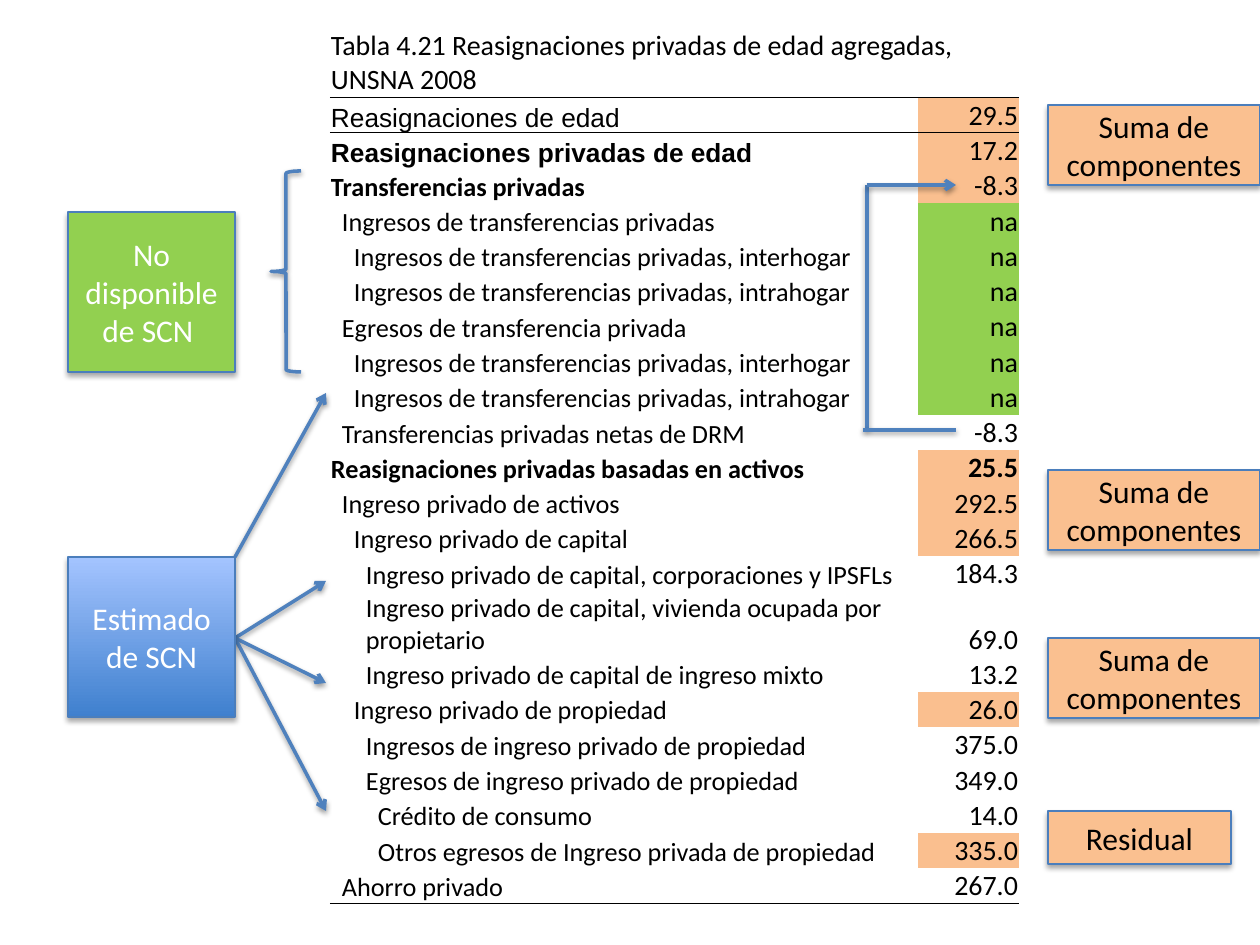
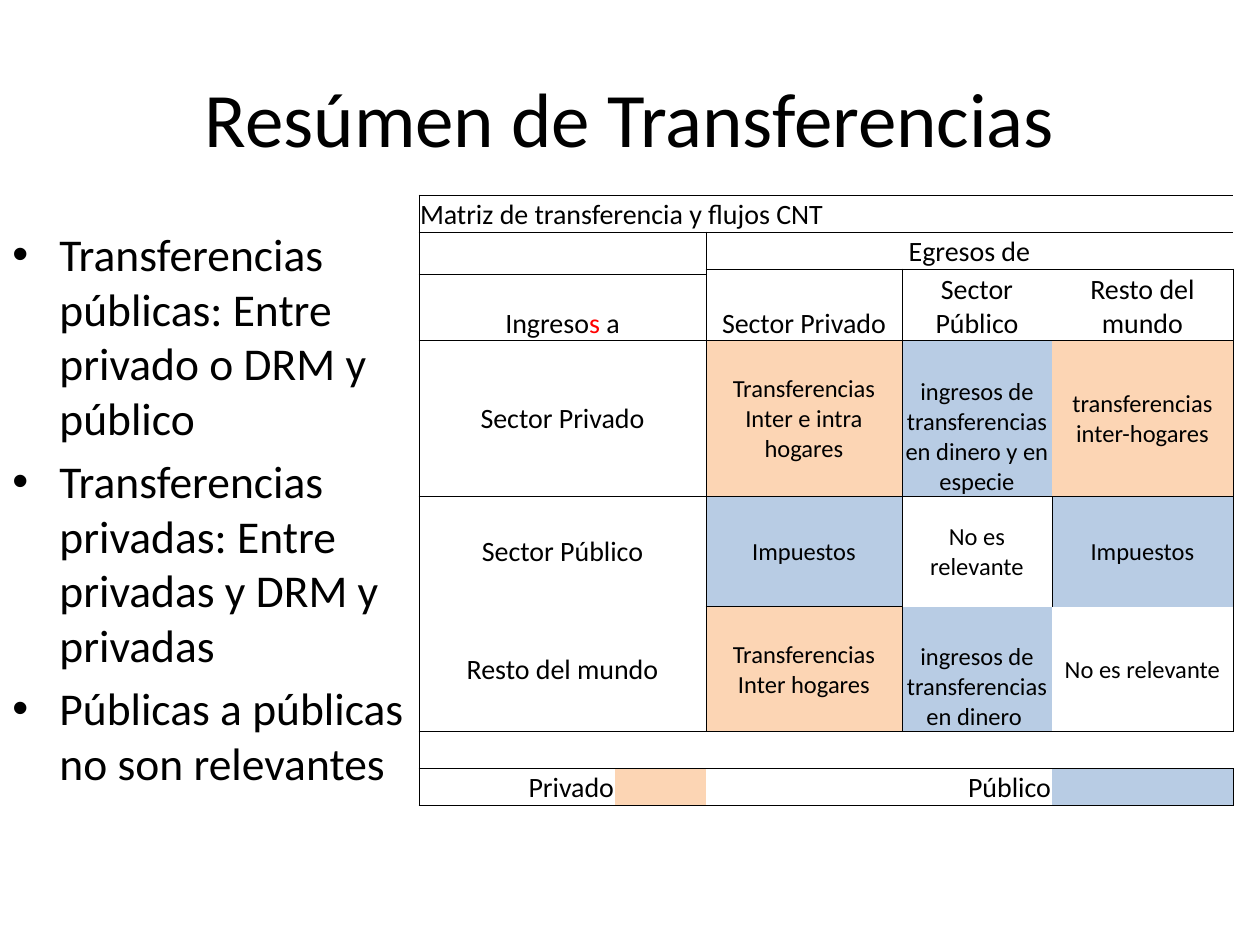
from typing import Any, NamedTuple, Optional

import lxml.etree
import pptx
import pptx.dml.color
import pptx.enum.shapes
import pptx.enum.text
import pptx.oxml.ns
import pptx.util

Color = pptx.dml.color.RGBColor
Align = pptx.enum.text.PP_ALIGN
Anchor = pptx.enum.text.MSO_ANCHOR
Shape = pptx.enum.shapes.MSO_SHAPE
qn = pptx.oxml.ns.qn

BLACK = Color(0x00, 0x00, 0x00)
WHITE = Color(0xFF, 0xFF, 0xFF)
RED = Color(0xFF, 0x00, 0x00)
GREEN = Color(0x92, 0xD0, 0x50)
ORANGE = Color(0xFA, 0xBF, 0x8F)
AMBER = Color(0xFA, 0xC0, 0x90)
PEACH = Color(0xFC, 0xD5, 0xB4)
SKY = Color(0xB8, 0xCC, 0xE4)
BLUE = Color(0x4F, 0x81, 0xBD)
EDGE = Color(0x4B, 0x7E, 0xBC)
DEEP = Color(0x3F, 0x80, 0xCE)
PALE = Color(0xA4, 0xC4, 0xFF)

FONT = "Calibri"
PLAIN_STYLE = "{2D5ABB26-0587-4C30-8999-92F81FD0307C}"
PX_PER_INCH = 126
ROW = 28


class Cell(NamedTuple):
    row: int
    col: int
    text: str = ""
    sides: str = ""
    fill: Optional[Color] = None
    rows: int = 1
    cols: int = 1
    size: int = 16
    align: Any = Align.CENTER
    anchor: Any = Anchor.MIDDLE
    left: int = 1
    bold: bool = False
    font: str = FONT


class Item(NamedTuple):
    level: int
    label: str
    value: str
    fill: Optional[Color] = None
    bold: bool = False
    font: str = FONT
    strong: bool = False


class Box(NamedTuple):
    x: int
    y: int
    w: int
    h: int
    text: str
    fill: Optional[Color]
    ink: Color


class Line(NamedTuple):
    x1: int
    y1: int
    x2: int
    y2: int
    arrow: bool = True


def px(n: int) -> int:
    return round(n * pptx.util.Inches(1) / PX_PER_INCH)


def add(node: Any, tag: str, **attrs: Any) -> Any:
    return lxml.etree.SubElement(node, qn(tag), {k: str(v) for k, v in attrs.items()})


def style(par: Any, size: int, color: Color = BLACK, align: Any = Align.LEFT,
          font: str = FONT, bold: bool = False) -> None:
    par.alignment = align
    par.font.size = pptx.util.Pt(size)
    par.font.name = font
    par.font.bold = bold
    par.font.color.rgb = color


def shade(shape: Any, alpha: int, dist: float) -> None:
    props = shape._element.spPr
    for old in props.findall(qn("a:effectLst")):
        props.remove(old)
    cast = add(add(props, "a:effectLst"), "a:outerShdw", blurRad=pptx.util.Pt(3.1),
               dist=pptx.util.Pt(dist), dir=90 * 60000, rotWithShape=0)
    add(add(cast, "a:srgbClr", val=BLACK), "a:alpha", val=alpha * 1000)


def stroke(shape: Any, color: Color, width: float) -> None:
    shape.line.color.rgb = color
    shape.line.width = pptx.util.Pt(width)


def add_line(slide: Any, line: Line) -> None:
    link = slide.shapes.add_connector(
        pptx.enum.shapes.MSO_CONNECTOR.STRAIGHT, *map(px, line[:4]))
    stroke(link, BLUE, 2)
    if line.arrow:
        add(link.line._get_or_add_ln(), "a:tailEnd", type="arrow")
    shade(link, 38, 1.6)


def add_box(slide: Any, box: Box) -> None:
    shape = slide.shapes.add_shape(Shape.RECTANGLE, *map(px, box[:4]))
    shape.shadow.inherit = False
    if box.fill is None:
        shape.fill.gradient()
        shape.fill.gradient_angle = 90
        for stop, color in zip(shape.fill.gradient_stops, (DEEP, PALE)):
            stop.color.rgb = color
    else:
        shape.fill.solid()
        shape.fill.fore_color.rgb = box.fill
    stroke(shape, EDGE, 0.75)
    shade(shape, 35, 1.8)
    frame = shape.text_frame
    frame.word_wrap = True
    frame.vertical_anchor = Anchor.MIDDLE
    frame.text = box.text
    style(frame.paragraphs[0], 18, box.ink, Align.CENTER)


def add_brace(slide: Any, x: int, y: int, w: int, h: int) -> None:
    brace = slide.shapes.add_shape(Shape.LEFT_BRACE, *map(px, (x, y, w, h)))
    brace.shadow.inherit = False
    brace.fill.background()
    stroke(brace, BLUE, 2)
    shade(brace, 38, 1.6)


def rule(cell: Any, sides: str) -> None:
    props = cell._tc.get_or_add_tcPr()
    for at, side in enumerate(s for s in "LRTB" if s in sides):
        edge = add(props, f"a:ln{side}", w=pptx.util.Pt(0.5))
        add(add(edge, "a:solidFill"), "a:srgbClr", val=BLACK)
        props.insert(at, edge)


def fill_cell(table: Any, cell: Cell) -> None:
    end_row, end_col = cell.row + cell.rows - 1, cell.col + cell.cols - 1
    head = table.cell(cell.row, cell.col)
    if cell.rows * cell.cols > 1:
        head.merge(table.cell(end_row, end_col))
    head.text = cell.text
    head.vertical_anchor = cell.anchor
    for row in range(cell.row, end_row + 1):
        for col in range(cell.col, end_col + 1):
            part = table.cell(row, col)
            part.margin_left, part.margin_right = px(cell.left), px(1)
            part.margin_top, part.margin_bottom = px(1), 0
            if cell.fill is None:
                part.fill.background()
            else:
                part.fill.solid()
                part.fill.fore_color.rgb = cell.fill
            style(part.text_frame.paragraphs[0], cell.size, BLACK,
                  cell.align, cell.font, cell.bold)
            outer = {"L": col == cell.col, "R": col == end_col,
                     "T": row == cell.row, "B": row == end_row}
            rule(part, "".join(s for s in cell.sides if outer[s]))


def add_table(slide: Any, x: int, y: int, cols: list[int], rows: list[int],
              cells: list[Cell]) -> Any:
    table = slide.shapes.add_table(
        len(rows), len(cols), *map(px, (x, y, sum(cols), sum(rows)))).table
    table.first_row = table.horz_banding = False
    table._tbl.tblPr.find(qn("a:tableStyleId")).text = PLAIN_STYLE
    for col, width in zip(table.columns, cols):
        col.width = px(width)
    for row, height in zip(table.rows, rows):
        row.height = px(height)
    for cell in cells:
        fill_cell(table, cell)
    return table


def add_text(slide: Any, x: int, y: int, w: int, h: int) -> Any:
    frame = slide.shapes.add_textbox(*map(px, (x, y, w, h))).text_frame
    frame.word_wrap = True
    return frame


INTER = "Ingresos de transferencias privadas, interhogar"
INTRA = "Ingresos de transferencias privadas, intrahogar"
ITEMS = [
    Item(0, "Reasignaciones de edad", "29.5", ORANGE, font="Arial"),
    Item(0, "Reasignaciones privadas de edad", "17.2", ORANGE, True, "Arial"),
    Item(0, "Transferencias privadas", "-8.3", ORANGE, True),
    Item(1, "Ingresos de transferencias privadas", "na", GREEN),
    Item(2, INTER, "na", GREEN),
    Item(2, INTRA, "na", GREEN),
    Item(1, "Egresos de transferencia privada", "na", GREEN),
    Item(2, INTER, "na", GREEN),
    Item(2, INTRA, "na", GREEN),
    Item(1, "Transferencias privadas netas de DRM", "-8.3"),
    Item(0, "Reasignaciones privadas basadas en activos", "25.5", ORANGE, True, strong=True),
    Item(1, "Ingreso privado de activos", "292.5", ORANGE),
    Item(2, "Ingreso privado de capital", "266.5", ORANGE),
    Item(3, "Ingreso privado de capital, corporaciones y IPSFLs", "184.3"),
    Item(3, "Ingreso privado de capital, vivienda ocupada por propietario", "69.0"),
    Item(3, "Ingreso privado de capital de ingreso mixto", "13.2"),
    Item(2, "Ingreso privado de propiedad", "26.0", ORANGE),
    Item(3, "Ingresos de ingreso privado de propiedad", "375.0"),
    Item(3, "Egresos de ingreso privado de propiedad", "349.0"),
    Item(4, "Crédito de consumo", "14.0"),
    Item(4, "Otros egresos de Ingreso privada de propiedad", "335.0", ORANGE),
    Item(1, "Ahorro privado", "267.0"),
]
LINES = [
    Line(867, 430, 867, 185, False),
    Line(867, 185, 956, 185),
    Line(863, 430, 956, 430, False),
    Line(235, 557, 326, 393),
    Line(235, 638, 326, 581),
    Line(235, 638, 326, 683),
    Line(235, 638, 326, 811),
]
BOXES = [
    Box(1048, 811, 183, 53, "Residual", AMBER, BLACK),
    *(Box(1048, y, 212, 80, "Suma de componentes", AMBER, BLACK) for y in (105, 470, 638)),
    Box(68, 212, 167, 160, "No disponible de SCN ", GREEN, WHITE),
    Box(68, 557, 167, 160, "Estimado de SCN", None, WHITE),
]
LOW = Anchor.BOTTOM
MATRIX = [
    Cell(0, 0, "Matriz de transferencia y flujos CNT", "LRTB", cols=5, align=Align.LEFT, anchor=LOW),
    Cell(1, 0, "", "LRT", rows=2, cols=2),
    Cell(1, 2, "Egresos de", "LRTB", cols=3, anchor=LOW),
    Cell(2, 2, "Sector Privado", "LTB", rows=2, anchor=LOW),
    Cell(2, 3, "Sector Público", "TB", rows=2, anchor=LOW),
    Cell(2, 4, "Resto del mundo", "TRB", rows=2, anchor=LOW),
    Cell(3, 0, "Ingresos a", "LRB", cols=2, anchor=LOW),
    Cell(4, 0, "Sector Privado", "LTR", cols=2),
    Cell(4, 2, "Transferencias Inter e intra hogares", "LT", PEACH, size=14),
    Cell(4, 3, "ingresos de transferencias en dinero y en especie", "T", SKY, size=14, anchor=LOW),
    Cell(4, 4, "transferencias inter-hogares", "TR", PEACH, size=14),
    Cell(5, 0, "Sector Público", "LR", cols=2),
    Cell(5, 2, "Impuestos", "LB", SKY, size=14),
    Cell(5, 3, "No es relevante", "R", size=14),
    Cell(5, 4, "Impuestos", "L", SKY, size=14),
    Cell(6, 0, "Resto del mundo", "LRB", cols=2),
    Cell(6, 2, "Transferencias Inter hogares", "LRTB", PEACH, size=14),
    Cell(6, 3, "ingresos de transferencias en dinero ", "LB", SKY, size=14, anchor=LOW),
    Cell(6, 4, "No es relevante", "RB", size=14),
    Cell(7, 0, "", "LRTB", cols=5),
    Cell(8, 0, "Privado", "LTB", align=Align.RIGHT),
    Cell(8, 1, "", "TB", PEACH),
    Cell(8, 2, "", "TB"),
    Cell(8, 3, "Público", "TB", align=Align.RIGHT),
    Cell(8, 4, "", "TRB", SKY),
]
POINTS = [
    "Transferencias públicas: Entre privado o DRM y público",
    "Transferencias privadas: Entre privadas y DRM y privadas",
    "Públicas a públicas no son relevantes",
]


def draw_flows(slide: Any) -> None:
    cells = [Cell(0, 0, "Tabla 4.21 Reasignaciones privadas de edad agregadas, UNSNA 2008",
                  "B", cols=2, align=Align.LEFT, anchor=LOW)]
    for row, item in enumerate(ITEMS, 1):
        sides = {1: "T", len(ITEMS): "B"}.get(row, "")
        cells.append(Cell(row, 0, item.label, sides, size=15, align=Align.LEFT, anchor=LOW,
                          left=max(1, 12 * item.level), bold=item.bold, font=item.font))
        cells.append(Cell(row, 1, item.value, sides, item.fill, align=Align.RIGHT,
                          anchor=LOW, bold=item.strong))
    add_table(slide, 330, 28, [588, 101], [ROW] * len(range(len(ITEMS) + 1)), cells)
    for line in LINES:
        add_line(slide, line)
    for box in BOXES:
        add_box(slide, box)
    add_brace(slide, 271, 171, 30, 201)


def draw_sum(slide: Any) -> None:
    title = add_text(slide, 63, 38, 1134, 157)
    title.vertical_anchor = Anchor.MIDDLE
    title.text = "Resúmen de Transferencias"
    style(title.paragraphs[0], 44, align=Align.CENTER)

    body = add_text(slide, 0, 220, 420, 624)
    body.text = "\n".join(POINTS)
    for at, par in enumerate(body.paragraphs):
        props = par._p.get_or_add_pPr()
        props.set("marL", str(px(47)))
        props.set("indent", str(px(-47)))
        if at:
            par.space_before = pptx.util.Pt(5)
        add(props, "a:buFont", typeface="Arial")
        add(props, "a:buChar", char="•")
        style(par, 26)

    table = add_table(slide, 419, 195, [196, 91, 196, 150, 181],
                      [37, 37, 6, 66, 156, 110, 125, 37, 37], MATRIX)
    par = table.cell(3, 0).text_frame.paragraphs[0]
    par.runs[0].text = "Ingreso"
    for text in ("s", " a"):
        par.add_run().text = text
    par.runs[1].font.color.rgb = RED


def main() -> None:
    deck = pptx.Presentation()
    deck.slide_width, deck.slide_height = px(1260), px(945)
    for draw in (draw_flows, draw_sum):
        draw(deck.slides.add_slide(deck.slide_layouts[6]))
    deck.save("out.pptx")


if __name__ == "__main__":
    main()
